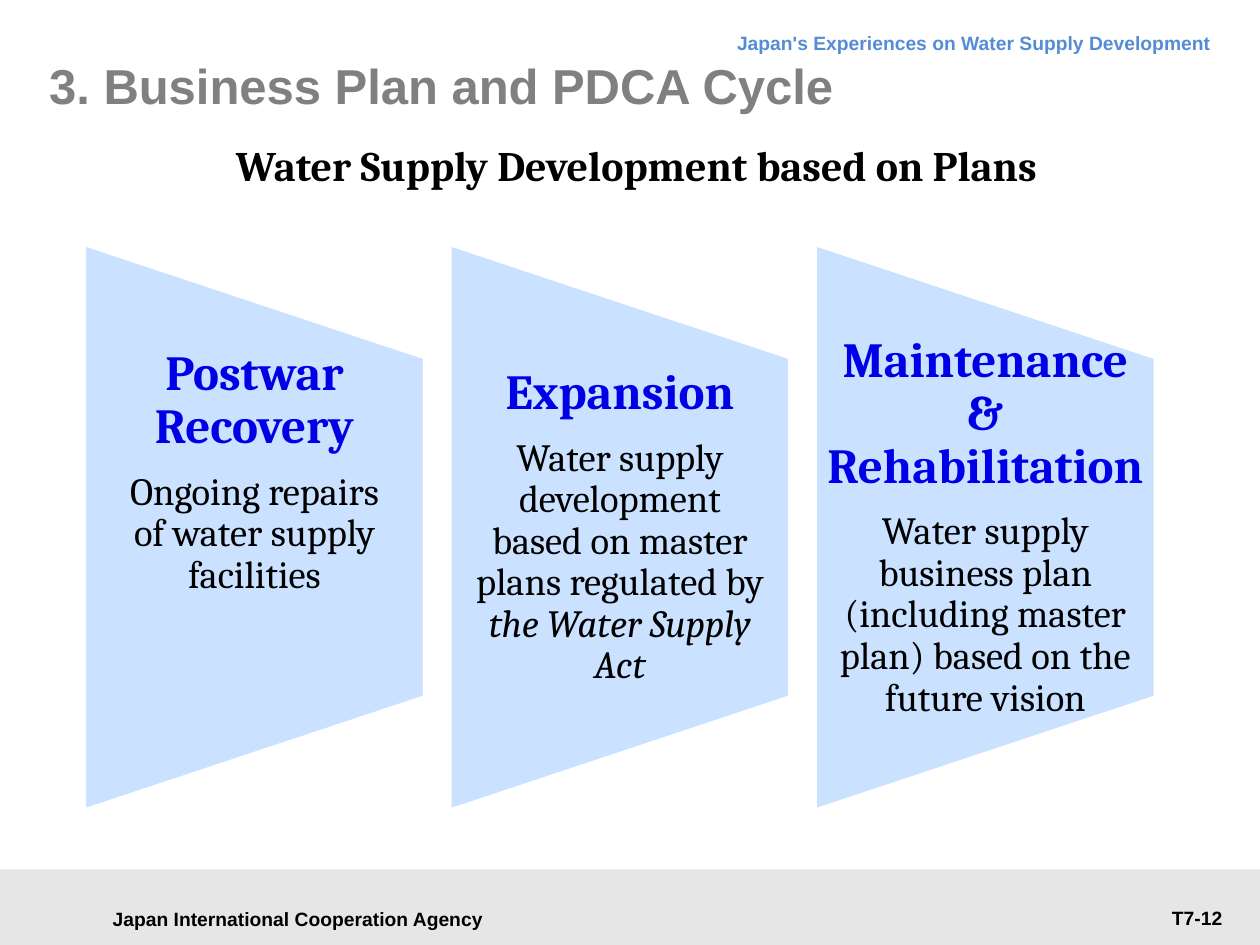
from dataclasses import dataclass

from pptx import Presentation
from pptx.dml.color import RGBColor
from pptx.enum import shapes, text
from pptx.util import Inches, Pt


@dataclass(frozen=True)
class Theme:
    sans: str = "Arial"
    serif: str = "Cambria"
    black: RGBColor = RGBColor(0, 0, 0)
    white: RGBColor = RGBColor(255, 255, 255)
    title: RGBColor = RGBColor(0x80, 0x80, 0x80)
    header: RGBColor = RGBColor(0x54, 0x8D, 0xD4)
    footer: RGBColor = RGBColor(0xE6, 0xE6, 0xE6)
    panel: RGBColor = RGBColor(0xCA, 0xE2, 0xFF)
    heading: RGBColor = RGBColor(0, 0, 0xE6)
    small: Pt = Pt(11)
    body: Pt = Pt(22)
    subtitle: Pt = Pt(24)
    large: Pt = Pt(28)


THEME = Theme()
ALIGN = text.PP_ALIGN
MIDDLE = text.MSO_ANCHOR.MIDDLE

PANEL_LEFT, PANEL_TOP, PANEL_STEP = 0.67, 1.94, 2.9
PANEL_WIDTH, PANEL_HEIGHT = 2.7, 4.49
PHASE_TOP, PHASE_HEIGHT = 2.84, 2.69

# heading, description, text in italics, side inset, bottom inset
PHASES = [
    ("Postwar Recovery", "Ongoing repairs\vof water supply facilities", "", 0.19, 0.87),
    ("Expansion", "Water supply development based on master plans regulated by ",
     "the Water Supply Act", 0.19, 0),
    ("Maintenance & Rehabilitation", "Water supply business plan (including master plan) "
     "based on the future vision", "", 0.04, 0),
]


def set_font(paragraph, name, size, color, bold=True):
    font = paragraph.font
    font.name, font.size, font.bold = name, size, bold
    font.color.rgb = color


def set_insets(frame, left, right, bottom=0):
    frame.margin_left, frame.margin_right = Inches(left), Inches(right)
    frame.margin_top, frame.margin_bottom = 0, Inches(bottom)


def add_shape(slide, kind, left, top, width, height, color):
    shape = slide.shapes.add_shape(
        kind, Inches(left), Inches(top), Inches(width), Inches(height))
    shape.shadow.inherit = False
    shape.fill.solid()
    shape.fill.fore_color.rgb = color
    shape.line.fill.background()
    return shape


def add_text_frame(slide, left, top, width, height):
    frame = slide.shapes.add_textbox(
        Inches(left), Inches(top), Inches(width), Inches(height)).text_frame
    frame.word_wrap = True
    return frame


def add_label(slide, words, left, top, width, height, align,
              name=THEME.sans, size=THEME.small, color=THEME.black):
    frame = add_text_frame(slide, left, top, width, height)
    label = frame.paragraphs[0]
    label.text, label.alignment = words, align
    set_font(label, name, size, color)
    return frame


def format_title(slide, words):
    title = slide.shapes.title
    title.left, title.top = Inches(0.39), Inches(0.28)
    title.width, title.height = Inches(8.98), Inches(0.79)
    frame = title.text_frame
    frame.vertical_anchor = MIDDLE
    set_insets(frame, 0, 0)
    heading = frame.paragraphs[0]
    heading.text, heading.alignment = words, ALIGN.LEFT
    set_font(heading, THEME.sans, THEME.large, THEME.title)


def add_phase(slide, left, heading, description, italics, side, bottom):
    """Add a tapering panel, which is a trapezoid turned on its side, and its text."""
    shift = (PANEL_HEIGHT - PANEL_WIDTH) / 2
    panel = add_shape(slide, shapes.MSO_SHAPE.FLOWCHART_MANUAL_OPERATION,
                      left - shift, PANEL_TOP + shift,
                      PANEL_HEIGHT, PANEL_WIDTH, THEME.panel)
    panel.rotation = 270
    panel.line.color.rgb = THEME.white
    panel.line.width = Pt(2)

    frame = add_text_frame(slide, left, PHASE_TOP, PANEL_WIDTH, PHASE_HEIGHT)
    frame.vertical_anchor = MIDDLE
    set_insets(frame, side, side, bottom)
    name, details = frame.paragraphs[0], frame.add_paragraph()
    name.text = heading
    name.space_after = Pt(10)
    set_font(name, THEME.serif, THEME.large, THEME.heading)
    details.text = description
    if italics:
        run = details.add_run()
        run.text = italics
        run.font.italic = True
    set_font(details, THEME.serif, THEME.body, THEME.black, bold=False)
    for paragraph in frame.paragraphs:
        paragraph.alignment = ALIGN.CENTER
        paragraph.line_spacing = 0.9


def main():
    deck = Presentation()
    deck.slide_width, deck.slide_height = Inches(10), Inches(7.5)
    slide = deck.slides.add_slide(deck.slide_layouts[5])

    add_shape(slide, shapes.MSO_SHAPE.RECTANGLE, 0, 6.9, 10, 0.6, THEME.footer)
    agency = add_label(slide, "Japan International Cooperation Agency",
                       0.71, 7.12, 3.31, 0.34, ALIGN.CENTER)
    agency.vertical_anchor = MIDDLE
    header = add_label(slide, "Japan's Experiences on Water Supply Development",
                       2.72, 0.13, 6.99, 0.38, ALIGN.RIGHT, color=THEME.header)
    header.paragraphs[0].line_spacing = Pt(18)
    add_label(slide, "T7-12", 8.23, 7.14, 1.57, 0.29, ALIGN.RIGHT)

    format_title(slide, "3. Business Plan and PDCA Cycle")
    for column, phase in enumerate(PHASES):
        add_phase(slide, PANEL_LEFT + column * PANEL_STEP, *phase)

    subtitle = add_label(slide, "Water Supply Development based on Plans",
                         1.66, 1.06, 6.68, 0.41, ALIGN.CENTER,
                         THEME.serif, THEME.subtitle)
    set_insets(subtitle, 0.1, 0)
    subtitle.paragraphs[0].line_spacing = Pt(32)

    deck.save("out.pptx")


if __name__ == "__main__":
    main()
